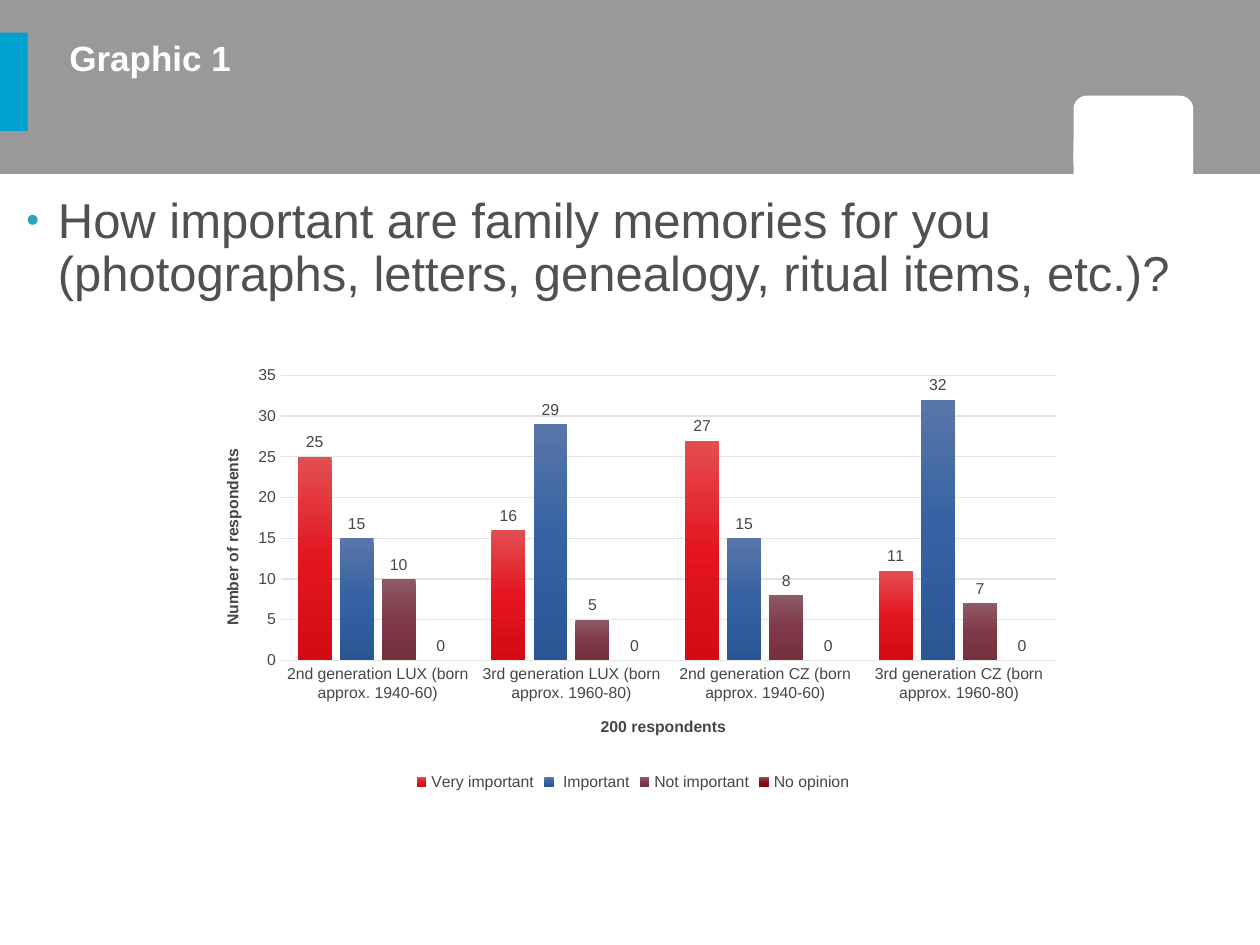
"""Build a slide with a clustered column chart about family memories."""
import copy
from dataclasses import dataclass

import pptx
import pptx.chart.data
import pptx.dml.color
import pptx.enum.chart
import pptx.enum.shapes
import pptx.enum.text
import pptx.oxml
import pptx.oxml.ns
import pptx.util

Inches = pptx.util.Inches
Pt = pptx.util.Pt
RGBColor = pptx.dml.color.RGBColor
Shape = pptx.enum.shapes.MSO_SHAPE
qn = pptx.oxml.ns.qn

WHITE = RGBColor(0xFF, 0xFF, 0xFF)
BANNER = RGBColor(0x80, 0x80, 0x80)
CYAN = RGBColor(0x00, 0xA0, 0xCF)
BODY = RGBColor(0x4F, 0x51, 0x50)
CHART_TEXT = RGBColor(0x46, 0x46, 0x46)
GRID = RGBColor(0xE3, 0xE3, 0xE3)
FONT = "Arial"


@dataclass
class Block:
    kind: Shape
    left: float
    top: float
    width: float
    height: float
    color: RGBColor
    alpha: int = 100


@dataclass
class Answer:
    name: str
    values: tuple[int, ...]
    gradient: tuple[str, str, str]


BLOCKS = (
    Block(Shape.RECTANGLE, 0, 0, 10, 1.38, BANNER, 80),
    Block(Shape.ROUNDED_RECTANGLE, 8.52, 0.76, 0.95, 0.63, WHITE),
    Block(Shape.RECTANGLE, 8.52, 1.2, 0.95, 0.19, WHITE),
    Block(Shape.RECTANGLE, 0, 0.26, 0.22, 0.78, CYAN),
)
CATEGORIES = (
    "2nd generation LUX (born approx. 1940-60)",
    "3rd generation LUX (born approx. 1960-80)",
    "2nd generation CZ (born approx. 1940-60)",
    "3rd generation CZ (born approx. 1960-80)",
)
ANSWERS = (
    Answer("Very important", (25, 16, 27, 11), ("E34E51", "E31620", "D20B15")),
    Answer(" Important", (15, 29, 15, 32), ("5976A9", "3462A2", "2A5794")),
    Answer("Not important", (10, 5, 8, 7), ("8D5B64", "803948", "75303E")),
    Answer("No opinion", (0, 0, 0, 0), ("924C4D", "880D13", "7E070C")),
)


def xml(tag: str, inner: str):
    """Parse a DrawingML or chart element."""
    ns = pptx.oxml.ns.nsdecls("a", "c")
    return pptx.oxml.parse_xml(f"<{tag} {ns}>{inner}</{tag.split()[0]}>")


def style(font, size: float, color: RGBColor, bold: bool = False) -> None:
    """Apply the slide typeface with a size and colour."""
    font.name, font.size, font.bold = FONT, Pt(size), bold
    font.color.rgb = color


def add_block(s, block: Block) -> None:
    """Draw one plain filled shape."""
    box = (block.left, block.top, block.width, block.height)
    sp = s.shapes.add_shape(block.kind, *map(Inches, box))
    sp.shadow.inherit = False
    sp.line.fill.background()
    sp.fill.solid()
    sp.fill.fore_color.rgb = block.color
    if block.alpha < 100:
        color = sp._element.spPr.find(".//" + qn("a:srgbClr"))
        color.append(xml(f'a:alpha val="{block.alpha * 1000}"', ""))


def set_frame(sp, text: str):
    """Fill a top-anchored frame without margins and return its paragraph."""
    tf = sp.text_frame
    tf.text = text
    tf.word_wrap = True
    tf.auto_size = pptx.enum.text.MSO_AUTO_SIZE.NONE
    tf.vertical_anchor = pptx.enum.text.MSO_ANCHOR.TOP
    tf.margin_left = tf.margin_top = tf.margin_right = tf.margin_bottom = 0
    p = tf.paragraphs[0]
    p.alignment = pptx.enum.text.PP_ALIGN.LEFT
    return p


def add_title(s) -> None:
    """Place the title on the banner."""
    sp = s.shapes.title
    sp.left, sp.top, sp.width, sp.height = map(Inches, (0.55, 0.29, 6.3, 1.08))
    p = set_frame(sp, "Graphic 1")
    style(p.runs[0].font, 20, WHITE, True)
    tree = s.shapes._spTree
    tree.remove(sp._element)
    tree.append(sp._element)


def add_question(s) -> None:
    """Add the bulleted survey question."""
    sp = s.shapes.add_textbox(*map(Inches, (0.21, 1.56, 9.62, 5.69)))
    p = set_frame(sp, "How important are family memories for you "
                      "(photographs, letters, genealogy, ritual items, etc.)?")
    p.line_spacing = 0.9
    pPr = p._p.get_or_add_pPr()
    pPr.set("marL", str(Inches(0.25)))
    pPr.set("indent", str(-Inches(0.25)))
    pPr.append(xml("a:buClr", '<a:srgbClr val="2DA2BF"/>'))
    pPr.append(xml('a:buSzPct val="75000"', ""))
    pPr.append(xml('a:buFont typeface="Arial"', ""))
    pPr.append(xml('a:buChar char="•"', ""))
    style(p.runs[0].font, 28, BODY)


def manual_layout(extra: str, **place: float):
    """Return a chart layout given as fractions of the chart."""
    modes = '<c:xMode val="edge"/><c:yMode val="edge"/>'
    sizes = "".join(f'<c:{k} val="{v}"/>' for k, v in place.items())
    return xml("c:layout", f"<c:manualLayout>{extra}{modes}{sizes}</c:manualLayout>")


def place_layout(element, layout, after: str | None = None) -> None:
    """Replace the layout of a chart element."""
    for old in element.findall(qn("c:layout")):
        element.remove(old)
    if after:
        element.find(qn(after)).addnext(layout)
    else:
        element.insert(0, layout)


def format_axis(axis, title: str, x: float, y: float) -> None:
    """Style an axis and position its title."""
    axis.major_tick_mark = axis.minor_tick_mark = pptx.enum.chart.XL_TICK_MARK.NONE
    style(axis.tick_labels.font, 9, CHART_TEXT)
    tf = axis.axis_title.text_frame
    tf.text = title
    style(tf.paragraphs[0].runs[0].font, 9, CHART_TEXT, True)
    place_layout(axis.axis_title._element, manual_layout("", x=x, y=y), "c:tx")


def format_series(series, answer: Answer) -> None:
    """Give a series its gradient and value labels."""
    fill = series.format.fill
    fill.gradient()
    fill.gradient_angle = 270
    first = series._element.find(".//" + qn("a:gs"))
    first.addnext(copy.deepcopy(first))
    for i, (stop, color) in enumerate(zip(fill.gradient_stops, answer.gradient)):
        stop.position = i / 2
        stop.color.rgb = RGBColor.from_string(color)
    labels = series.data_labels
    labels.show_value = True
    labels.position = pptx.enum.chart.XL_LABEL_POSITION.OUTSIDE_END
    style(labels.font, 9, CHART_TEXT)


def add_survey_chart(s) -> None:
    """Add the survey results as clustered columns."""
    data = pptx.chart.data.CategoryChartData()
    data.categories = CATEGORIES
    for answer in ANSWERS:
        data.add_series(answer.name, answer.values)
    chart = s.shapes.add_chart(pptx.enum.chart.XL_CHART_TYPE.COLUMN_CLUSTERED,
                               *map(Inches, (1.53, 2.84, 6.99, 3.48)), data).chart
    chart.has_title = False
    style(chart.font, 10, RGBColor(0, 0, 0))
    chart.has_legend = True
    chart.legend.position = pptx.enum.chart.XL_LEGEND_POSITION.BOTTOM
    chart.legend.include_in_layout = False
    style(chart.legend.font, 9, CHART_TEXT)
    plot = chart.plots[0]
    plot.gap_width, plot.overlap, plot.vary_by_categories = 100, -24, False
    for series, answer in zip(plot.series, ANSWERS):
        format_series(series, answer)
    format_axis(chart.category_axis, "200 respondents", 0.46, 0.81)
    format_axis(chart.value_axis, "Number of respondents", 0.03, 0.2)
    chart.value_axis.minimum_scale, chart.value_axis.maximum_scale = 0, 35
    chart.value_axis.major_unit = 5
    chart.value_axis.format.line.fill.background()
    for line in (chart.category_axis.format.line,
                 chart.value_axis.major_gridlines.format.line):
        line.color.rgb, line.width = GRID, Pt(0.75)
    area = chart._chartSpace.find(".//" + qn("c:plotArea"))
    inner = '<c:layoutTarget val="inner"/>'
    place_layout(area, manual_layout(inner, x=0.1, y=0.04, w=0.88, h=0.65))


def main() -> None:
    """Assemble and save the slide."""
    prs = pptx.Presentation()
    prs.slide_width, prs.slide_height = Inches(10), Inches(7.5)
    s = prs.slides.add_slide(prs.slide_layouts[5])
    for block in BLOCKS:
        add_block(s, block)
    add_title(s)
    add_question(s)
    add_survey_chart(s)
    prs.save("out.pptx")


if __name__ == "__main__":
    main()
